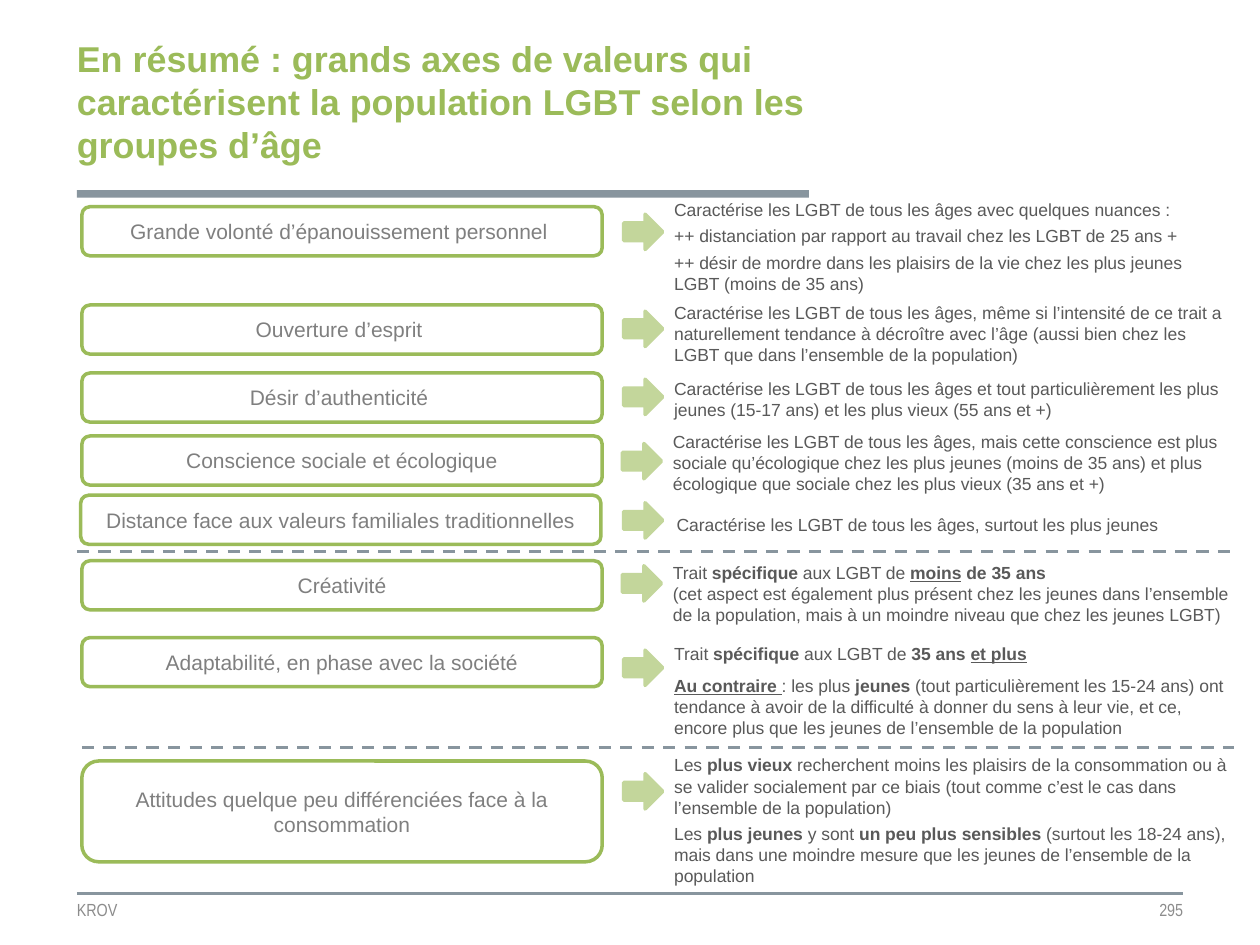
import pptx
import pptx.util
import pptx.dml.color
import pptx.enum.dml
import pptx.enum.shapes
import pptx.enum.text
import pptx.oxml
from dataclasses import dataclass

Inches, Pt = pptx.util.Inches, pptx.util.Pt
Shape = pptx.enum.shapes.MSO_SHAPE
Align = pptx.enum.text.PP_ALIGN
Middle = pptx.enum.text.MSO_ANCHOR.MIDDLE


def rgb(code):
    return pptx.dml.color.RGBColor.from_string(code)


@dataclass(frozen=True)
class Theme:
    green: object = rgb("9BBB59")
    pale: object = rgb("C3D69B")
    slate: object = rgb("88959E")
    label: object = rgb("7F7F7F")
    body: object = rgb("595959")
    foot: object = rgb("8C8C8C")
    font: str = "Arial"
    narrow: str = "Arial Narrow"
    head: float = 20.5
    mid: float = 12
    small: float = 10


T = Theme()

TITLE = ("En résumé : grands axes de valeurs qui caractérisent "
         "la population LGBT selon les groupes d’âge")

# label, (box left, top, height), arrow (left, top),
# note (left, top, height), gap between paragraphs, paragraphs
# In the notes, *...* is bold and _..._ is underlined.
ROWS = [
    ("Grande volonté d’épanouissement personnel ",
     (0.65, 1.64, 0.39), (4.95, 1.7), (5.35, 1.52, 0.87), 3,
     ["Caractérise les LGBT de tous les âges avec quelques nuances :",
      "++ distanciation par rapport au travail chez les LGBT de 25 ans +",
      "++ désir de mordre dans les plaisirs de la vie chez les plus jeunes "
      "LGBT (moins de 35 ans)"]),
    ("Ouverture d’esprit ",
     (0.65, 2.42, 0.39), (4.95, 2.47), (5.35, 2.39, 0.51), 0,
     ["Caractérise les LGBT de tous les âges, même si l’intensité de ce trait "
      "a naturellement tendance à décroître avec l’âge (aussi bien chez les "
      "LGBT que dans l’ensemble de la population)"]),
    ("Désir d’authenticité ",
     (0.65, 2.96, 0.39), (4.95, 3.01), (5.35, 2.91, 0.51), 0,
     ["Caractérise les LGBT de tous les âges et tout particulièrement les "
      "plus jeunes (15-17 ans) et les plus vieux (55 ans et +)"]),
    ("Conscience sociale et écologique",
     (0.65, 3.46, 0.39), (4.94, 3.52), (5.34, 3.39, 0.56), 0,
     ["Caractérise les LGBT de tous les âges, mais cette conscience est plus "
      "sociale qu’écologique chez les plus jeunes (moins de 35 ans) et plus "
      "écologique que sociale chez les plus vieux (35 ans et +)"]),
    ("Distance face aux valeurs familiales traditionnelles",
     (0.64, 3.93, 0.39), (4.95, 3.99), (5.37, 4.02, 0.29), 0,
     ["Caractérise les LGBT de tous les âges, surtout les plus jeunes"]),
    ("Créativité",
     (0.65, 4.45, 0.39), (4.94, 4.49), (5.34, 4.36, 0.7), 0,
     ["Trait *spécifique* aux LGBT de *_moins_ de 35 ans *\n(cet aspect est "
      "également plus présent chez les jeunes dans l’ensemble de la "
      "population, mais à un moindre niveau que chez les jeunes LGBT)"]),
    ("Adaptabilité, en phase avec la société",
     (0.65, 5.06, 0.39), (4.95, 5.16), (5.35, 5.03, 0.9), 6,
     ["Trait *spécifique* aux LGBT de *35 ans _et plus_*",
      "*_Au contraire _*: les plus *jeunes* (tout particulièrement les 15-24 "
      "ans) ont tendance à avoir de la difficulté à donner du sens à leur "
      "vie, et ce, encore plus que les jeunes de l’ensemble de la population"]),
    ("Attitudes quelque peu différenciées face à la consommation",
     (0.65, 6.04, 0.8), (4.95, 6.14), (5.35, 5.96, 1.1), 3,
     ["Les *plus vieux *recherchent moins les plaisirs de la consommation ou "
      "à se valider socialement par ce biais (tout comme c’est le cas dans "
      "l’ensemble de la population)",
      "Les *plus jeunes *y sont *un peu plus sensibles *(surtout les 18-24 "
      "ans), mais dans une moindre mesure que les jeunes de l’ensemble de la "
      "population"]),
]

# left, right, height on the slide, width in points, dashed
RULES = [(0.61, 9.39, 7.09, 1.5, False),
         (0.61, 9.76, 4.38, 1.75, True),
         (0.65, 9.79, 5.93, 1.75, True)]

# text, left, width, alignment
FOOT = [("KROV", 0.61, 2.8, Align.LEFT), ("295", 6.55, 2.84, Align.RIGHT)]


def style(para, size, color, name=T.font, align=Align.LEFT):
    para.alignment = align
    font = para.font
    font.size, font.name, font.color.rgb = Pt(size), name, color


def flat(frame):
    """Wrap, centre vertically and drop the insets."""
    frame.word_wrap = True
    frame.vertical_anchor = Middle
    frame.margin_left = frame.margin_right = 0
    frame.margin_top = frame.margin_bottom = 0
    return frame


def mark(para, text):
    """Write text with its *bold* and _underline_ marks as runs."""
    for i, part in enumerate(text.split("*")):
        for j, bit in enumerate(part.split("_")):
            for k, line in enumerate(bit.split("\n")):
                if k:
                    para.add_line_break()
                if line:
                    run = para.add_run()
                    run.text = line
                    if i % 2:
                        run.font.bold = True
                    if j % 2:
                        run.font.underline = True


def add_text(slide, *area):
    return flat(slide.shapes.add_textbox(*map(Inches, area)).text_frame)


def add_form(slide, kind, area, fill=None, line=None):
    form = slide.shapes.add_shape(kind, *map(Inches, area))
    form.shadow.inherit = False
    if fill is None:
        form.fill.background()
    else:
        form.fill.solid()
        form.fill.fore_color.rgb = fill
    if line is None:
        form.line.fill.background()
    else:
        form.line.color.rgb = line
        form.line.width = Pt(2)
    return form


def add_rule(slide, left, right, top, width, dashed):
    rule = slide.shapes.add_connector(
        pptx.enum.shapes.MSO_CONNECTOR.STRAIGHT,
        Inches(left), Inches(top), Inches(right), Inches(top))
    rule.line.color.rgb = T.slate
    rule.line.width = Pt(width)
    if dashed:
        rule.line.dash_style = pptx.enum.dml.MSO_LINE.DASH
    props = rule._element.spPr
    props.append(pptx.oxml.parse_xml(
        '<a:effectLst xmlns:a='
        '"http://schemas.openxmlformats.org/drawingml/2006/main"/>'))


def add_row(slide, label, box, arrow, note, gap, paras):
    left, top, high = box
    form = add_form(slide, Shape.ROUNDED_RECTANGLE,
                    (left, top, 4.13, high), line=T.green)
    frame = form.text_frame
    frame.word_wrap = True
    frame.vertical_anchor = Middle
    frame.text = label
    style(frame.paragraphs[0], T.mid, T.label, align=Align.CENTER)

    add_form(slide, Shape.RIGHT_ARROW, (*arrow, 0.31, 0.28), T.pale, T.pale)

    left, top, high = note
    frame = add_text(slide, left, top, 4.41, high)
    for i, text in enumerate(paras):
        para = frame.add_paragraph() if i else frame.paragraphs[0]
        if i:
            para.space_before = Pt(gap)
        mark(para, text)
        style(para, T.small, T.body)


def main():
    deck = pptx.Presentation()
    deck.slide_width, deck.slide_height = Inches(10), Inches(7.5)
    slide = deck.slides.add_slide(deck.slide_layouts[5])

    title = slide.shapes.title
    title.left, title.top = Inches(0.61), Inches(0.29)
    title.width, title.height = Inches(5.8), Inches(1.02)
    flat(title.text_frame).text = TITLE
    para = title.text_frame.paragraphs[0]
    style(para, T.head, T.green)
    para.font.bold = True

    add_form(slide, Shape.RECTANGLE, (0.61, 1.51, 5.81, 0.06), T.slate)
    for rule in RULES:
        add_rule(slide, *rule)
    for text, left, width, align in FOOT:
        frame = add_text(slide, left, 7.09, width, 0.26)
        frame.text = text
        style(frame.paragraphs[0], T.small, T.foot, T.narrow, align)
    for row in ROWS:
        add_row(slide, *row)
    deck.save("out.pptx")


if __name__ == "__main__":
    main()
